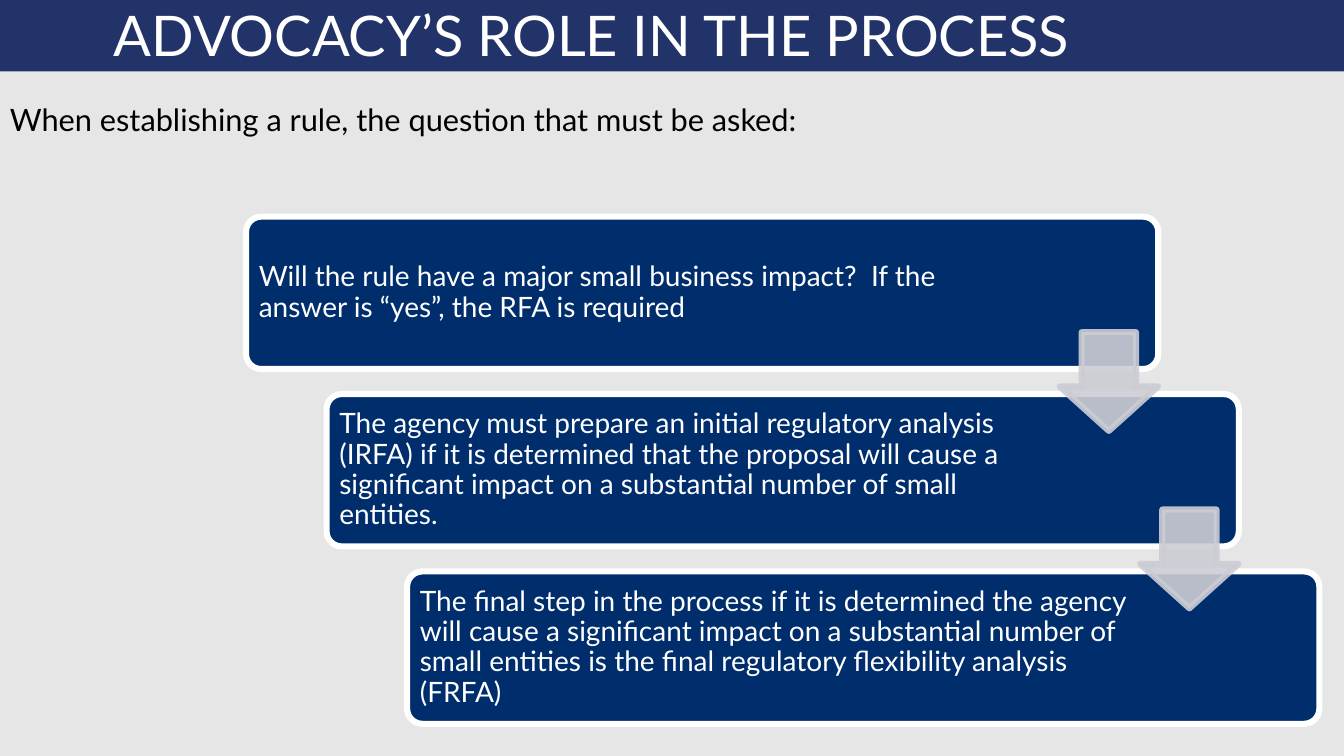
from lxml import etree
from pptx import Presentation
from pptx.dml.color import RGBColor
from pptx.enum.shapes import MSO_SHAPE
from pptx.enum.text import MSO_ANCHOR, PP_ALIGN
from pptx.oxml.ns import qn
from pptx.util import Cm, Pt

RECTANGLE = MSO_SHAPE.RECTANGLE
ROUNDED = MSO_SHAPE.ROUNDED_RECTANGLE
DOWN_ARROW = MSO_SHAPE.DOWN_ARROW
MIDDLE, TOP = MSO_ANCHOR.MIDDLE, MSO_ANCHOR.TOP
LEFT, CENTER = PP_ALIGN.LEFT, PP_ALIGN.CENTER

BACKGROUND = RGBColor(0xE7, 0xE6, 0xE6)
BANNER = RGBColor(0x22, 0x33, 0x69)
NAVY = RGBColor(0x00, 0x2E, 0x6D)
ARROW_GREY = RGBColor(0xCC, 0xCD, 0xD4)
WHITE = RGBColor(0xFF, 0xFF, 0xFF)
BLACK = RGBColor(0x00, 0x00, 0x00)

FONT = "Lato"
OUTLINE = Pt(4.33)
SLIDE_WIDTH, SLIDE_HEIGHT = Cm(33.87), Cm(19.05)

TITLE = "ADVOCACY’S ROLE IN THE PROCESS"
QUESTION = "When establishing a rule, the question that must be asked:"
STEPS = [
    ("Will the rule have a major small business impact?  If the answer is "
     "“yes”, the RFA is required", Cm(4.09)),
    ("The agency must prepare an initial regulatory analysis (IRFA) if it is "
     "determined that the proposal will cause a significant impact on a "
     "substantial number of small entities.", Cm(4.72)),
    ("The final step in the process if it is determined the agency will cause "
     "a significant impact on a substantial number of small entities is the "
     "final regulatory flexibility analysis (FRFA)", Cm(4.72)),
]


def write(frame, text, size, color, anchor=MIDDLE, align=LEFT, spacing=0.9):
    frame.word_wrap = True
    frame.vertical_anchor = anchor
    paragraph = frame.paragraphs[0]
    paragraph.alignment = align
    paragraph.line_spacing = spacing
    run = paragraph.add_run()
    run.text = text
    run.font.name = FONT
    run.font.size = Pt(size)
    run.font.color.rgb = color


def add_block(slide, preset, box, fill, outline=None):
    block = slide.shapes.add_shape(preset, *box)
    block.shadow.inherit = False
    block.fill.solid()
    block.fill.fore_color.rgb = fill
    if outline is None:
        block.line.fill.background()
    else:
        block.line.color.rgb = outline
        block.line.width = OUTLINE
    return block


def add_banner(slide, left, top, width, height):
    add_block(slide, RECTANGLE, (left, top, width, height), BANNER)
    title = slide.shapes.add_textbox(
        left + Cm(0.84), top + Cm(0.08), Cm(28.14), height)
    write(title.text_frame, TITLE, 40, WHITE, align=CENTER)


def add_question(slide, left, top, width, height):
    question = slide.shapes.add_textbox(left, top, width, height)
    write(question.text_frame, QUESTION, 22, BLACK, anchor=TOP, spacing=1.0)


def add_step(slide, text, right_inset, box):
    step = add_block(slide, ROUNDED, box, NAVY, WHITE)
    step.adjustments[0] = 0.1
    frame = step.text_frame
    frame.margin_left = frame.margin_top = frame.margin_bottom = Cm(0.21)
    frame.margin_right = right_inset
    write(frame, text, 20, WHITE)


def add_step_arrow(slide, left, top, size):
    arrow = add_block(
        slide, DOWN_ARROW, (left, top, size, size), ARROW_GREY, ARROW_GREY)
    arrow.adjustments[0] = 0.55
    arrow.adjustments[1] = 0.45
    for color in arrow.element.spPr.iter(qn("a:srgbClr")):
        etree.SubElement(color, qn("a:alpha")).set("val", "90000")


def add_staircase(slide, left, top, width, height):
    step_width, step_height, arrow_size = Cm(22.99), Cm(3.84), Cm(2.49)
    gaps = len(STEPS) - 1
    shift = (width - step_width) // gaps
    drop = (height - step_height) // gaps
    corners = [(left + i * shift, top + i * drop) for i in range(len(STEPS))]
    for (text, right_inset), (x, y) in zip(STEPS, corners):
        add_step(slide, text, right_inset, (x, y, step_width, step_height))
    for x, y in corners[:-1]:
        add_step_arrow(
            slide, x + step_width - arrow_size, y + Cm(2.91), arrow_size)


def main():
    presentation = Presentation()
    presentation.slide_width = SLIDE_WIDTH
    presentation.slide_height = SLIDE_HEIGHT
    slide = presentation.slides.add_slide(presentation.slide_layouts[6])
    slide.background.fill.solid()
    slide.background.fill.fore_color.rgb = BACKGROUND
    add_banner(slide, 0, 0, SLIDE_WIDTH, Cm(1.8))
    add_staircase(slide, Cm(6.2), Cm(5.46), Cm(27.05), Cm(12.78))
    add_question(slide, 0, Cm(2.41), SLIDE_WIDTH, Cm(2.9))
    presentation.save("out.pptx")


if __name__ == "__main__":
    main()
